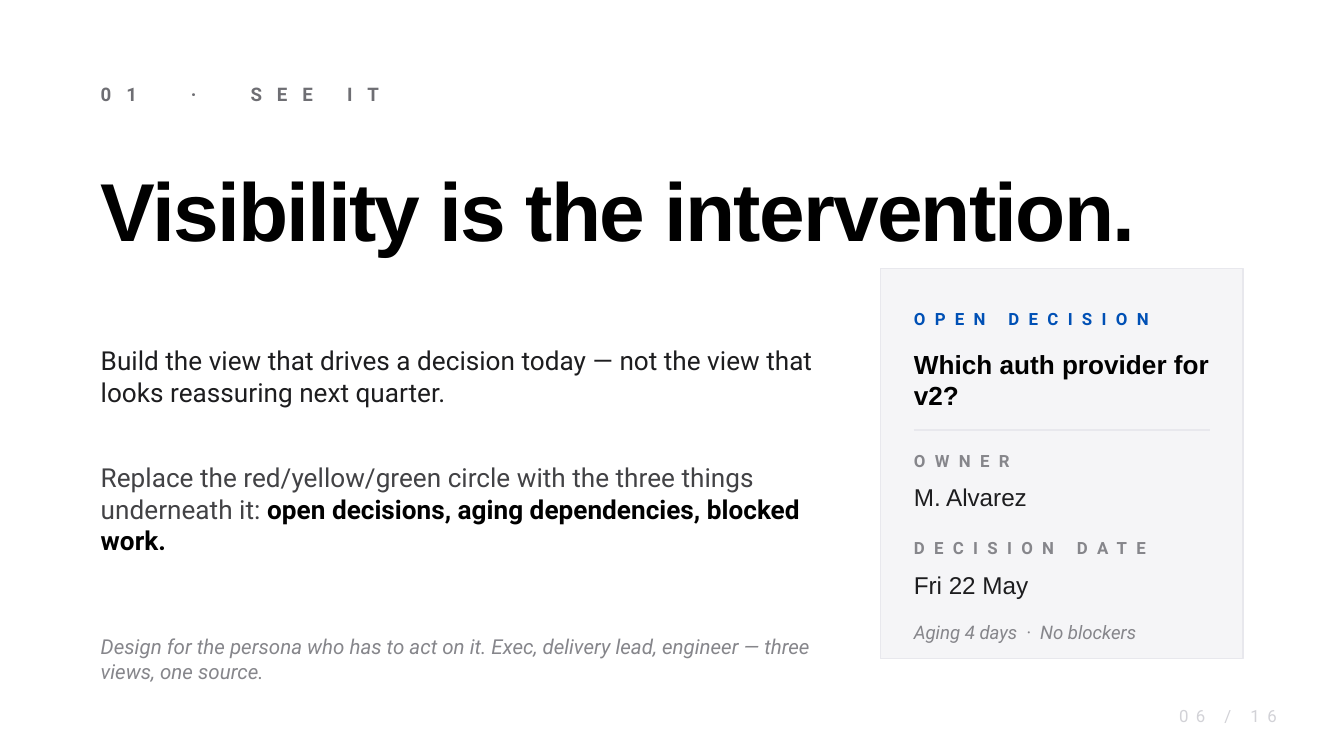
import pptx
import pptx.dml.color
import pptx.enum.shapes
import pptx.enum.text
import pptx.oxml.ns
import pptx.util
from lxml import etree

Inches = pptx.util.Inches
Pt = pptx.util.Pt
RGBColor = pptx.dml.color.RGBColor

BLACK = RGBColor(0x00, 0x00, 0x00)
INK = RGBColor(0x1D, 0x1D, 0x1F)
BODY = RGBColor(0x42, 0x42, 0x45)
EYEBROW = RGBColor(0x6E, 0x6E, 0x73)
MUTED = RGBColor(0x86, 0x86, 0x8B)
FAINT = RGBColor(0xD2, 0xD2, 0xD7)
RULE = RGBColor(0xE8, 0xE8, 0xED)
PANEL = RGBColor(0xF5, 0xF5, 0xF7)
BLUE = RGBColor(0x00, 0x50, 0xB5)


def add_run(p, text, size=14, color=INK, font="Roboto", bold=False, italic=False, spacing=0):
    r = p.add_run()
    r.text = text
    r.font.size = Pt(size)
    r.font.name = font
    r.font.color.rgb = color
    r.font.bold = bold
    r.font.italic = italic
    if spacing:
        r.font._element.set("spc", str(spacing * 100))
    return r


def add_text(s, box, text, align=pptx.enum.text.PP_ALIGN.LEFT, **style):
    tf = s.shapes.add_textbox(*map(Inches, box)).text_frame
    tf.word_wrap = True
    tf.margin_left = tf.margin_top = tf.margin_right = tf.margin_bottom = 0
    tf.vertical_anchor = pptx.enum.text.MSO_ANCHOR.MIDDLE
    p = tf.paragraphs[0]
    p.alignment = align
    add_run(p, text, **style)
    return tf


def add_header(s, left, top, width):
    add_text(s, (left, top, width, 0.3), "01  ·  SEE IT",
             size=10, color=EYEBROW, bold=True, spacing=8)
    add_text(s, (left, top + 0.5, width, 1), "Visibility is the intervention.",
             size=44, color=BLACK, font="Arial", bold=True, spacing=-1)


def add_message(s, left, top, width):
    tf = add_text(s, (left, top, width, 2.4),
                  "Build the view that drives a decision today — not the view that "
                  "looks reassuring next quarter.")
    p = tf.add_paragraph()
    p.space_before = Pt(29)
    add_run(p, "Replace the red/yellow/green circle with the three things underneath it: ",
            color=BODY)
    add_run(p, "open decisions, aging dependencies, blocked work.", color=BLACK, bold=True)
    add_text(s, (left, top + 2.5, width, 0.5),
             "Design for the persona who has to act on it. Exec, delivery lead, engineer "
             "— three views, one source.",
             size=11, color=MUTED, italic=True)


def add_rule(s, left, top, width):
    rule = s.shapes.add_connector(pptx.enum.shapes.MSO_CONNECTOR.STRAIGHT, Inches(left),
                                  Inches(top), Inches(left + width), Inches(top))
    rule.line.color.rgb = RULE
    rule.line.width = Pt(0.75)
    etree.SubElement(rule._element.spPr, pptx.oxml.ns.qn("a:effectLst"))


def add_decision_card(s, left, top, width, height):
    card = s.shapes.add_shape(pptx.enum.shapes.MSO_SHAPE.RECTANGLE,
                              *map(Inches, (left, top, width, height)))
    card.shadow.inherit = False
    card.fill.solid()
    card.fill.fore_color.rgb = PANEL
    card.line.color.rgb = RULE
    card.line.width = Pt(0.75)

    pad = 0.25
    x, w = left + pad, width - 2 * pad
    label = dict(size=9, bold=True, spacing=5)
    add_text(s, (x, top + pad, w, 0.25), "OPEN DECISION", color=BLUE, **label)
    add_text(s, (x, top + 0.55, w, 0.55), "Which auth provider for v2?",
             color=BLACK, font="Arial", bold=True)
    add_rule(s, x, top + 1.2, w)
    fields = [("OWNER", "M. Alvarez"), ("DECISION DATE", "Fri 22 May")]
    for i, (name, value) in enumerate(fields):
        y = top + 1.3 + 0.65 * i
        add_text(s, (x, y, w, 0.25), name, color=MUTED, **label)
        add_text(s, (x, y + 0.25, w, 0.3), value, size=13, font="Arial")
    add_text(s, (x, top + 2.55, w, 0.3), "Aging 4 days  ·  No blockers",
             size=10, color=MUTED, italic=True)


def add_page_number(s, left, top, width, height):
    add_text(s, (left, top, width, height), "06 / 16",
             align=pptx.enum.text.PP_ALIGN.RIGHT, size=9, color=FAINT, spacing=4)


def main():
    prs = pptx.Presentation()
    prs.slide_width = Inches(10)
    prs.slide_height = Inches(10 * 9 / 16)
    s = prs.slides.add_slide(prs.slide_layouts[6])
    add_header(s, 0.75, 0.55, 8.5)
    add_message(s, 0.75, 2.15, 5.5)
    add_decision_card(s, 6.55, 2, 2.7, 2.9)
    add_page_number(s, 8.5, 5.2, 1, 0.25)
    prs.save("out.pptx")


if __name__ == "__main__":
    main()
